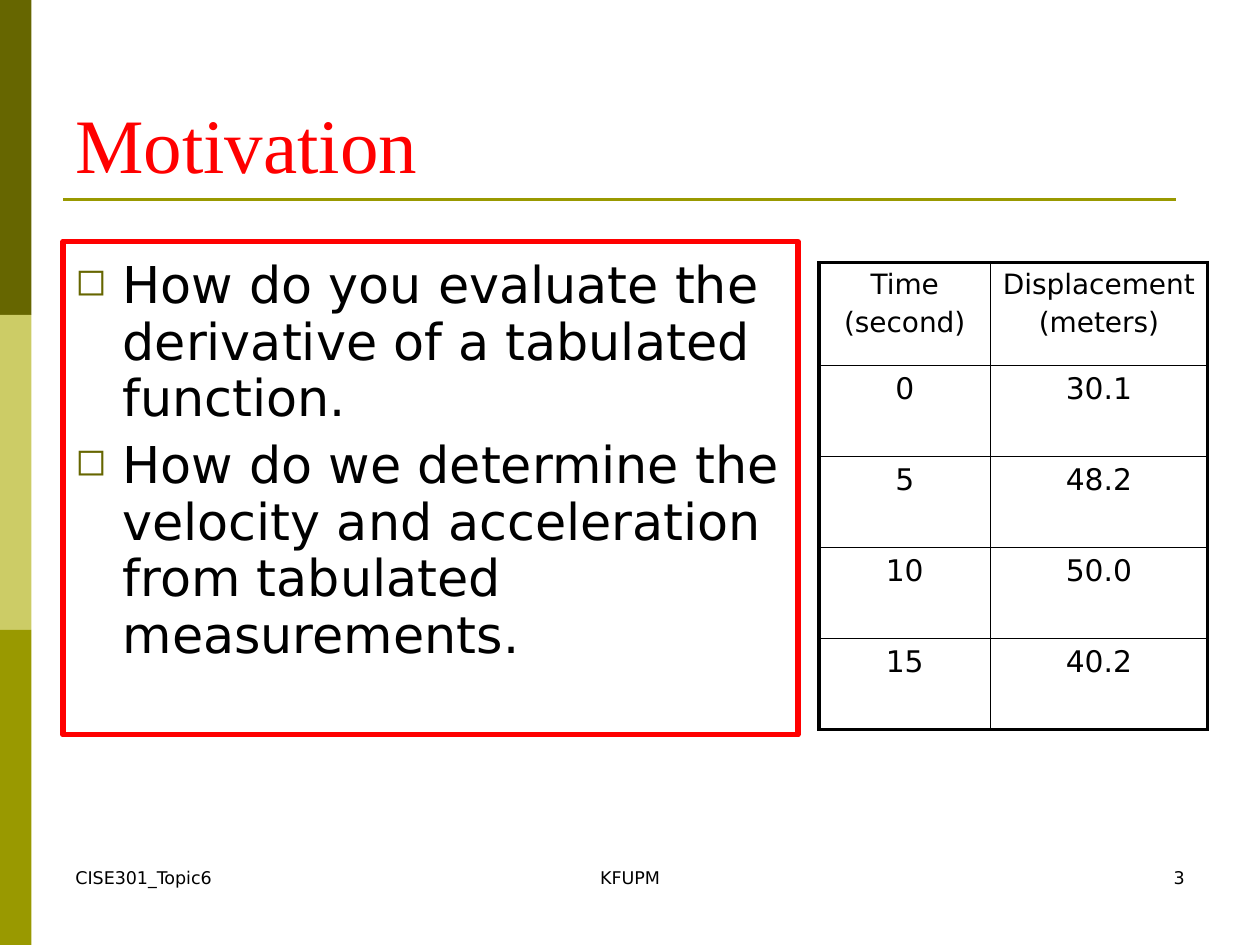
import dataclasses

import lxml.etree
import pptx
import pptx.dml.color
import pptx.enum.shapes
import pptx.enum.text
import pptx.oxml.ns
import pptx.util

Pt = pptx.util.Pt
RGB = pptx.dml.color.RGBColor.from_string
ALIGN = pptx.enum.text.PP_ALIGN
qn = pptx.oxml.ns.qn


@dataclasses.dataclass(frozen=True)
class Theme:
    text: str = "000000"
    accent: str = "FF0000"
    rule: str = "999900"
    bullet: str = "666600"
    bands: tuple = ("666600", "CCCC66", "999900")
    title_font: str = "Times New Roman"
    body_font: str = "DejaVu Sans"
    title_size: float = 44
    body_size: float = 29
    header_size: float = 16
    value_size: float = 17
    footer_size: float = 10


THEME = Theme()


def apply_format(target, values):
    for name, value in values.items():
        setattr(target, name, value)


def write_paragraphs(frame, lines, size, font=THEME.body_font, color=THEME.text, **layout):
    for index, line in enumerate(lines):
        paragraph = frame.paragraphs[0] if index == 0 else frame.add_paragraph()
        apply_format(paragraph, layout)
        run = paragraph.add_run()
        run.text = line
        apply_format(run.font, {"size": Pt(size), "name": font})
        run.font.color.rgb = RGB(color)


def add_text(slide, box, lines, size, anchor=pptx.enum.text.MSO_ANCHOR.TOP, **style):
    frame = slide.shapes.add_textbox(*map(Pt, box)).text_frame
    apply_format(frame, {"word_wrap": True, "vertical_anchor": anchor})
    write_paragraphs(frame, lines, size, **style)
    return frame


def add_bullets(frame, indent):
    for paragraph in frame.paragraphs:
        properties = paragraph._p.get_or_add_pPr()
        properties.set("marL", str(Pt(indent)))
        properties.set("indent", str(-Pt(indent)))
        color = lxml.etree.SubElement(properties, qn("a:buClr"))
        lxml.etree.SubElement(color, qn("a:srgbClr"), val=THEME.bullet)
        lxml.etree.SubElement(properties, qn("a:buSzPct"), val="75000")
        lxml.etree.SubElement(properties, qn("a:buChar"), char="◻")


def add_rectangle(slide, box, fill=None, outline=None, width=0):
    shape = slide.shapes.add_shape(pptx.enum.shapes.MSO_SHAPE.RECTANGLE, *map(Pt, box))
    shape.shadow.inherit = False
    if fill:
        shape.fill.solid()
        shape.fill.fore_color.rgb = RGB(fill)
    else:
        shape.fill.background()
    if outline:
        shape.line.color.rgb = RGB(outline)
        shape.line.width = Pt(width)
    else:
        shape.line.fill.background()


def add_rule(slide, left, right, top):
    connector = slide.shapes.add_connector(
        pptx.enum.shapes.MSO_CONNECTOR.STRAIGHT, Pt(left), Pt(top), Pt(right), Pt(top)
    )
    connector.line.color.rgb = RGB(THEME.rule)
    connector.line.width = Pt(1.5)
    lxml.etree.SubElement(connector._element.spPr, qn("a:effectLst"))


def set_borders(cell, widths):
    properties = cell._tc.get_or_add_tcPr()
    for index, (side, width) in enumerate(widths.items()):
        line = lxml.etree.Element(qn(f"a:ln{side}"), w=str(Pt(width)))
        fill = lxml.etree.SubElement(line, qn("a:solidFill"))
        lxml.etree.SubElement(fill, qn("a:srgbClr"), val=THEME.text)
        properties.insert(index, line)


def add_data_table(slide, left, top, column_widths, row_heights, rows, inner=1, outer=2.25):
    table = slide.shapes.add_table(
        len(rows), len(column_widths), Pt(left), Pt(top),
        Pt(sum(column_widths)), Pt(sum(row_heights)),
    ).table
    apply_format(table, {"first_row": False, "horz_banding": False})
    for column, width in zip(table.columns, column_widths):
        column.width = Pt(width)
    last_row, last_column = len(rows) - 1, len(column_widths) - 1
    for i, values in enumerate(rows):
        table.rows[i].height = Pt(row_heights[i])
        size = THEME.header_size if i == 0 else THEME.value_size
        for j, value in enumerate(values):
            cell = table.cell(i, j)
            cell.fill.background()
            apply_format(cell, {"margin_left": Pt(3), "margin_right": Pt(3)})
            write_paragraphs(cell.text_frame, value.split("\n"), size,
                             alignment=ALIGN.CENTER, space_before=Pt(size * 0.2))
            set_borders(cell, {
                "L": outer if j == 0 else inner,
                "R": outer if j == last_column else inner,
                "T": outer if i == 0 else inner,
                "B": outer if i == last_row else inner,
            })


def main():
    presentation = pptx.Presentation()
    apply_format(presentation, {"slide_width": Pt(720), "slide_height": Pt(540)})
    slide = presentation.slides.add_slide(presentation.slide_layouts[6])

    for index, color in enumerate(THEME.bands):
        add_rectangle(slide, (0, index * 180, 18, 180), fill=color)
    add_rule(slide, 36, 672, 114)

    footers = (
        (36, 168, "CISE301_Topic6", ALIGN.LEFT),
        (246, 228, "KFUPM", ALIGN.CENTER),
        (516, 168, "3", ALIGN.RIGHT),
    )
    for left, width, text, alignment in footers:
        add_text(slide, (left, 492, width, 36), [text], THEME.footer_size, alignment=alignment)

    add_text(slide, (36, 21.6, 648, 90), ["Motivation"], THEME.title_size,
             anchor=pptx.enum.text.MSO_ANCHOR.BOTTOM,
             font=THEME.title_font, color=THEME.accent)
    questions = add_text(slide, (36, 144, 426, 252), [
        "How do you evaluate the derivative of a tabulated function.",
        "How do we determine the velocity and acceleration from tabulated measurements.",
    ], THEME.body_size, line_spacing=0.93, space_before=Pt(5.8))
    add_bullets(questions, 27)

    add_data_table(slide, 468, 150, (98, 124), (59, 52, 52, 52, 52), [
        ("Time\n(second)", "Displacement\n(meters)"),
        ("0", "30.1"),
        ("5", "48.2"),
        ("10", "50.0"),
        ("15", "40.2"),
    ])
    add_rectangle(slide, (36, 138, 420, 282), outline=THEME.accent, width=3)
    presentation.save("out.pptx")


if __name__ == "__main__":
    main()
